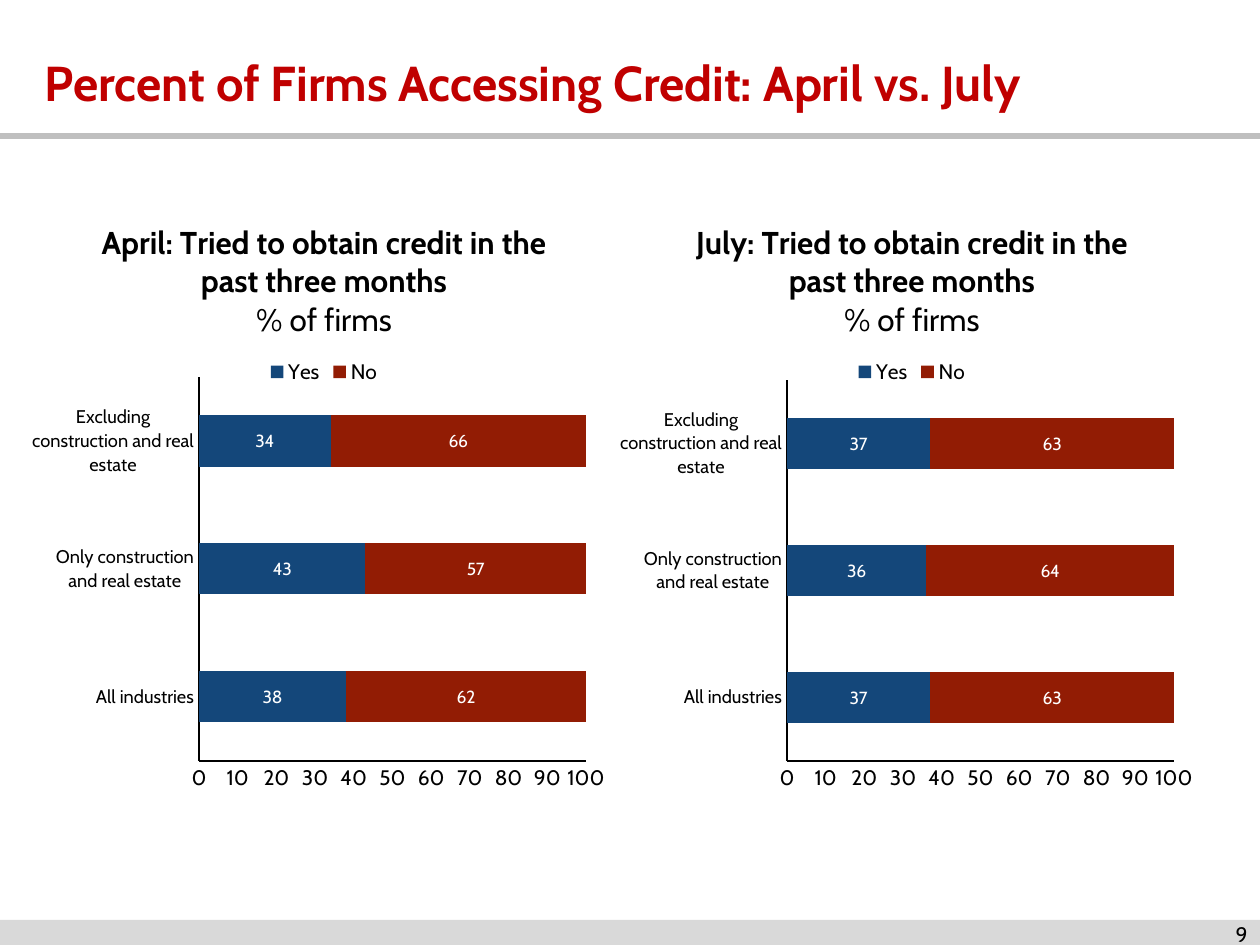
from lxml import etree
from pptx import Presentation
from pptx.chart.data import CategoryChartData
from pptx.dml.color import RGBColor
from pptx.enum.chart import XL_CHART_TYPE, XL_LEGEND_POSITION, XL_TICK_MARK
from pptx.enum.shapes import MSO_CONNECTOR, MSO_SHAPE
from pptx.enum.text import MSO_ANCHOR, PP_ALIGN
from pptx.oxml import parse_xml
from pptx.oxml.ns import nsdecls, qn
from pptx.util import Pt

COLORS = {"title": "C00000", "rule": "BFBFBF", "footer": "D9D9D9", "text": "000000",
          "label": "FFFFFF", "Yes": "14477A", "No": "921C04"}
FONT = "Cabin"
CATEGORIES = ["All industries", "Only construction and real estate",
              "Excluding construction and real estate"]
CHART_WIDTH, CHART_HEIGHT = 581, 630
PLOT_LEFT, PLOT_WIDTH, PLOT_BOTTOM = 165, 389, 562


def px(*lengths):
    """Turn pixels, 126 to the inch, into EMU."""
    return [round(length * 914400 / 126) for length in lengths]


def set_font(font, size, color, bold=False):
    font.name = FONT
    font.size = Pt(size)
    font.bold = bold
    font.color.rgb = RGBColor.from_string(COLORS[color])


deck = Presentation()
deck.slide_width, deck.slide_height = px(1260, 945)
page = deck.slides.add_slide(deck.slide_layouts[5])

# Footer band and the rule under the title
footer = page.shapes.add_shape(MSO_SHAPE.RECTANGLE, *px(0, 920, 1260, 25))
footer.shadow.inherit = False
footer.fill.solid()
footer.fill.fore_color.rgb = RGBColor.from_string(COLORS["footer"])
footer.line.fill.background()

rule = page.shapes.add_connector(MSO_CONNECTOR.STRAIGHT, *px(0, 136, 1260, 136))
rule.line.color.rgb = RGBColor.from_string(COLORS["rule"])
rule.line.width = Pt(3)
etree.SubElement(rule.element.spPr, qn("a:effectLst"))

# Title
title = page.shapes.title
title.left, title.top, title.width, title.height = px(32, 40, 1210, 84)
title.text_frame.vertical_anchor = MSO_ANCHOR.MIDDLE
para = title.text_frame.paragraphs[0]
para.alignment = PP_ALIGN.LEFT
span = para.add_run()
span.text = "Percent of Firms Accessing Credit: April vs. July"
set_font(span.font, 28, "title", bold=True)

# Page number
box = page.shapes.add_textbox(*px(966, 924, 294, 21))
box.text_frame.word_wrap = True
box.text_frame.vertical_anchor = MSO_ANCHOR.MIDDLE
para = box.text_frame.paragraphs[0]
para.alignment = PP_ALIGN.RIGHT
span = para.add_run()
span.text = "9"
set_font(span.font, 12, "text")

# One stacked bar chart per month: left edge, plot top, share of "Yes"
MONTHS = [("July", 620, 181, [37, 36, 37]),
          ("April", 32, 178, [38, 43, 34])]
for month, left, plot_top, yes_shares in MONTHS:
    data = CategoryChartData()
    data.categories = CATEGORIES
    data.add_series("Yes", yes_shares)
    data.add_series("No", [100 - share for share in yes_shares])
    frame = page.shapes.add_chart(XL_CHART_TYPE.BAR_STACKED,
                                  *px(left, 199, CHART_WIDTH, CHART_HEIGHT), data)
    chart = frame.chart
    set_font(chart.font, 10, "text")

    heading = chart.chart_title.text_frame
    lines = [(f"{month}: Tried to obtain credit in the past three months", True),
             ("% of firms", False)]
    for number, (text, bold) in enumerate(lines):
        para = heading.add_paragraph() if number else heading.paragraphs[0]
        span = para.add_run()
        span.text = text
        set_font(span.font, 18, "text", bold)

    chart.has_legend = True
    chart.legend.position = XL_LEGEND_POSITION.TOP
    chart.legend.include_in_layout = False
    set_font(chart.legend.font, 12, "text")

    for axis, size in ((chart.category_axis, 10.5), (chart.value_axis, 12)):
        axis.has_major_gridlines = False
        axis.major_tick_mark = axis.minor_tick_mark = XL_TICK_MARK.NONE
        axis.format.line.color.rgb = RGBColor.from_string(COLORS["text"])
        axis.format.line.width = Pt(0.75)
        set_font(axis.tick_labels.font, size, "text")
    chart.value_axis.minimum_scale = 0
    chart.value_axis.maximum_scale = 100
    chart.value_axis.major_unit = 10

    plot = chart.plots[0]
    plot.gap_width = 150
    plot.overlap = 100
    plot.vary_by_categories = False
    for series in plot.series:
        series.format.fill.solid()
        series.format.fill.fore_color.rgb = RGBColor.from_string(COLORS[series.name])
        labels = series.data_labels
        labels.show_value = True
        labels.number_format = "#,##0"
        labels.number_format_is_linked = False
        set_font(labels.font, 10, "label")

    # Fix the inner plot area as fractions of the chart
    plot_area = chart.element.find(".//" + qn("c:plotArea"))
    for layout in plot_area.findall(qn("c:layout")):
        plot_area.remove(layout)
    plot_area.insert(0, parse_xml(
        f'<c:layout {nsdecls("c")}><c:manualLayout><c:layoutTarget val="inner"/>'
        '<c:xMode val="edge"/><c:yMode val="edge"/>'
        f'<c:x val="{PLOT_LEFT / CHART_WIDTH}"/><c:y val="{plot_top / CHART_HEIGHT}"/>'
        f'<c:w val="{PLOT_WIDTH / CHART_WIDTH}"/>'
        f'<c:h val="{(PLOT_BOTTOM - plot_top) / CHART_HEIGHT}"/>'
        '</c:manualLayout></c:layout>'))

deck.save("out.pptx")
